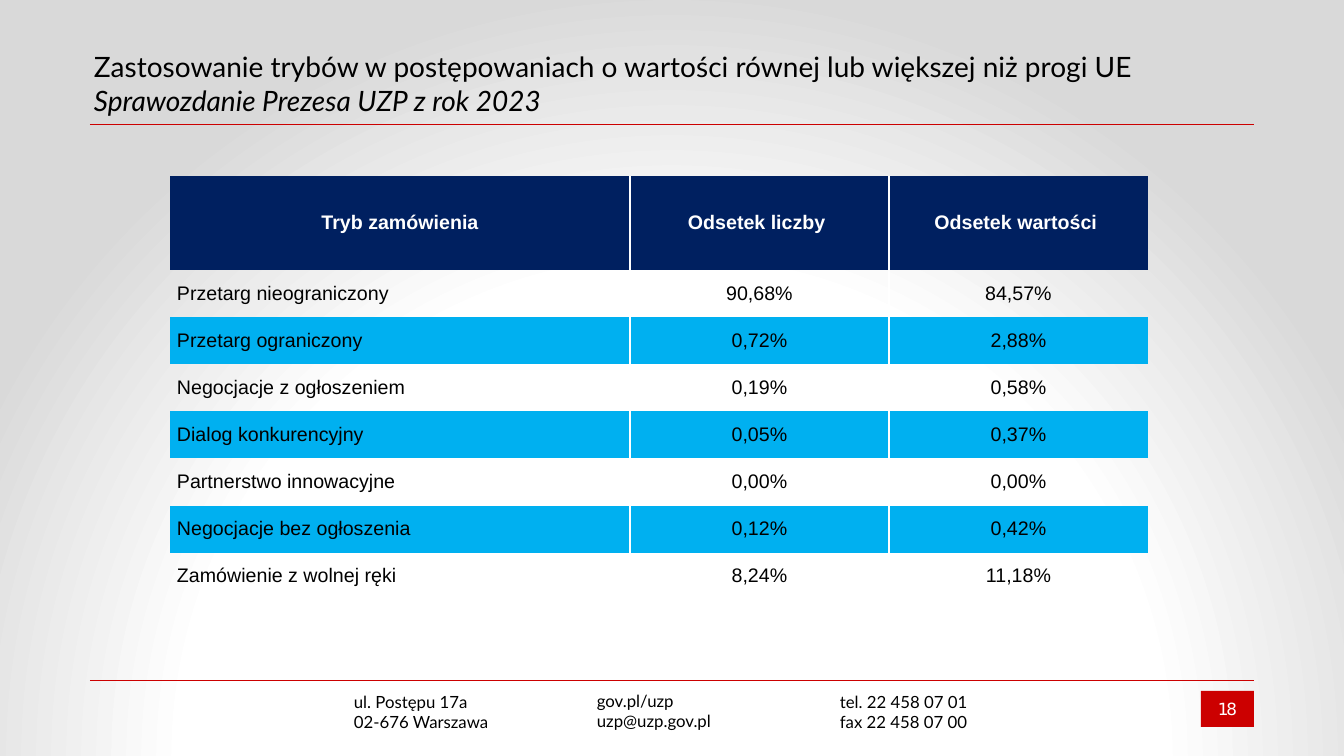
from dataclasses import dataclass

from pptx import Presentation
from pptx import util as u
from pptx.dml.color import RGBColor
from pptx.enum import shapes, text
from pptx.oxml import parse_xml
from pptx.oxml.ns import nsdecls, qn

EMU_PER_PX = 914400 / 100.8
PLAIN_TABLE_STYLE = "{2D5ABB26-0587-4C30-8999-92F81FD0307C}"


@dataclass(frozen=True)
class Theme:
    black: str = "000000"
    white: str = "FFFFFF"
    grey: str = "D9D9D9"
    red: str = "CC0000"
    navy: str = "002060"
    sky: str = "00B0F0"
    text_font: str = "Lato"
    table_font: str = "Arial"
    number_font: str = "DejaVu Sans"
    title_size: int = 20
    table_size: int = 14
    footer_size: int = 12


def px(length):
    return u.Emu(round(length * EMU_PER_PX))


def box(*lengths):
    return [px(length) for length in lengths]


class SlideBuilder:
    def __init__(self, slide, theme):
        self.slide = slide
        self.theme = theme

    def style(self, paragraph, font, size, color, bold=False):
        paragraph.font.name = font
        paragraph.font.size = u.Pt(size)
        paragraph.font.bold = bold
        paragraph.font.color.rgb = RGBColor.from_string(color)

    def background(self):
        stops = ((0, self.theme.white), (63, self.theme.white), (100, self.theme.grey))
        stop_xml = "".join(
            f'<a:gs pos="{position * 1000}"><a:srgbClr val="{color}"/></a:gs>'
            for position, color in stops
        )
        self.slide.element.cSld.insert(0, parse_xml(
            f'<p:bg {nsdecls("p", "a")}><p:bgPr><a:gradFill><a:gsLst>{stop_xml}</a:gsLst>'
            '<a:path path="circle"><a:fillToRect l="50000" t="130000" r="50000" b="-30000"/>'
            "</a:path></a:gradFill><a:effectLst/></p:bgPr></p:bg>"
        ))

    def rule(self, left, right, y):
        connector = self.slide.shapes.add_connector(
            shapes.MSO_CONNECTOR.STRAIGHT, *box(left, y, right, y))
        connector.line.color.rgb = RGBColor.from_string(self.theme.red)
        connector.line.width = u.Pt(0.25)
        connector._element.spPr.append(parse_xml(f'<a:effectLst {nsdecls("a")}/>'))

    def page_number(self, number, *place):
        shape = self.slide.shapes.add_shape(shapes.MSO_SHAPE.RECTANGLE, *box(*place))
        shape.shadow.inherit = False
        shape.fill.solid()
        shape.fill.fore_color.rgb = RGBColor.from_string(self.theme.red)
        shape.line.fill.background()
        shape.text_frame.vertical_anchor = text.MSO_ANCHOR.MIDDLE
        paragraph = shape.text_frame.paragraphs[0]
        paragraph.alignment = text.PP_ALIGN.CENTER
        run = paragraph.add_run()
        run.text = number
        run._r.get_or_add_rPr().set("spc", "-150")
        self.style(paragraph, self.theme.number_font, self.theme.footer_size, self.theme.white)

    def text_frame(self, *place):
        frame = self.slide.shapes.add_textbox(*box(*place)).text_frame
        frame.word_wrap = True
        return frame

    def title(self, heading, subtitle, *place):
        frame = self.text_frame(*place)
        frame.vertical_anchor = text.MSO_ANCHOR.BOTTOM
        paragraph = frame.paragraphs[0]
        paragraph.add_run().text = heading
        paragraph.add_line_break()
        run = paragraph.add_run()
        run.text = subtitle
        run.font.italic = True
        self.style(paragraph, self.theme.text_font, self.theme.title_size, self.theme.black)

    def contact(self, lines, *place):
        frame = self.text_frame(*place)
        frame.text = "\n".join(lines)
        for paragraph in frame.paragraphs:
            self.style(paragraph, self.theme.text_font, self.theme.footer_size, self.theme.black)

    def column_border(self, cell, side):
        cell._tc.get_or_add_tcPr().append(parse_xml(
            f'<a:{side} {nsdecls("a")} w="12700"><a:solidFill>'
            f'<a:srgbClr val="{self.theme.white}"/></a:solidFill></a:{side}>'
        ))

    def cell(self, cell, content, row, column, last_column):
        header = row == 0
        cell.margin_left = cell.margin_right = px(7)
        cell.margin_top = cell.margin_bottom = 0
        cell.vertical_anchor = text.MSO_ANCHOR.MIDDLE
        if column > 0:
            self.column_border(cell, "lnL")
        if column < last_column:
            self.column_border(cell, "lnR")
        if header or row % 2 == 0:
            cell.fill.solid()
            cell.fill.fore_color.rgb = RGBColor.from_string(
                self.theme.navy if header else self.theme.sky)
        else:
            cell.fill.background()
        cell.text = content
        paragraph = cell.text_frame.paragraphs[0]
        centred = header or column > 0
        paragraph.alignment = text.PP_ALIGN.CENTER if centred else text.PP_ALIGN.LEFT
        if header or column < last_column:
            paragraph.space_before = paragraph.space_after = u.Pt(3)
        self.style(paragraph, self.theme.table_font, self.theme.table_size,
                   self.theme.white if header else self.theme.black, header)

    def table(self, rows, left, top, widths, header_height, body_height):
        table = self.slide.shapes.add_table(
            len(rows), len(widths),
            *box(left, top, sum(widths), header_height + body_height)).table
        table.horz_banding = False
        table._tbl.tblPr.find(qn("a:tableStyleId")).text = PLAIN_TABLE_STYLE
        for column, width in zip(table.columns, widths):
            column.width = px(width)
        for index, contents in enumerate(rows):
            table.rows[index].height = px(
                body_height / (len(rows) - 1) if index else header_height)
            for column, content in enumerate(contents):
                self.cell(table.cell(index, column), content, index, column, len(widths) - 1)


PROCEDURES = [
    ("Tryb zamówienia", "Odsetek liczby ", "Odsetek wartości "),
    ("Przetarg nieograniczony", "90,68%", "84,57%"),
    ("Przetarg ograniczony", "0,72%", "2,88%"),
    ("Negocjacje z ogłoszeniem", "0,19%", "0,58%"),
    ("Dialog konkurencyjny", "0,05%", "0,37%"),
    ("Partnerstwo innowacyjne", "0,00%", "0,00%"),
    ("Negocjacje bez ogłoszenia", "0,12%", "0,42%"),
    ("Zamówienie z wolnej ręki", "8,24%", "11,18%"),
]

CONTACTS = [
    (687, ("ul. Postępu 17a", "02-676 Warszawa")),
    (686, ("gov.pl/uzp", "uzp@uzp.gov.pl")),
    (687, ("tel. 22 458 07 01", "fax 22 458 07 00")),
]


def main():
    presentation = Presentation()
    presentation.slide_width, presentation.slide_height = box(1344, 756)
    slide = presentation.slides.add_slide(presentation.slide_layouts[6])
    builder = SlideBuilder(slide, Theme())
    builder.background()
    for y in (680, 124):
        builder.rule(90, 1254, y)
    builder.page_number("18", 1201, 691, 53, 36)
    for index, (top, lines) in enumerate(CONTACTS):
        builder.contact(lines, 344 + 243 * index, top, 222, 50)
    builder.title(
        "Zastosowanie trybów w postępowaniach o wartości równej lub większej niż progi UE",
        "Sprawozdanie Prezesa UZP z rok 2023", 84, 13, 1176, 109)
    builder.table(PROCEDURES, 170, 176, (460, 259, 259), 94, 330)
    presentation.save("out.pptx")


if __name__ == "__main__":
    main()
